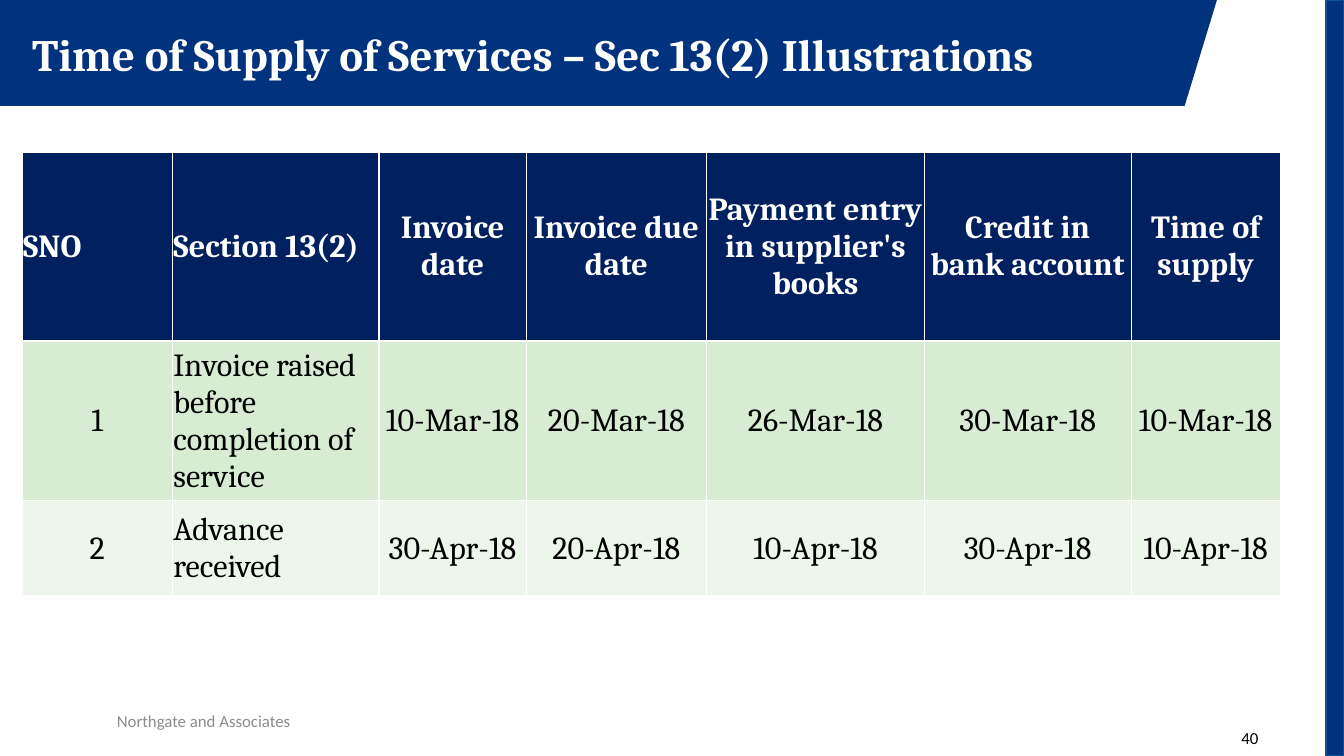
from lxml import etree
from pptx import Presentation
from pptx import util as u
from pptx.dml.color import RGBColor
from pptx.enum import shapes, text
from pptx.oxml import ns

COLORS = {
    "white": "FFFFFF", "black": "000000", "gray": "8C8C8C",
    "banner": "00327D", "stripe_line": "0B5292",
    "header": "002060", "odd_row": "D7ECD3", "even_row": "ECF6EA",
}
COLUMN_WIDTHS = [1.49, 2.05, 1.46, 1.79, 2.16, 2.05, 1.48]
ROW_HEIGHTS = [1.87, 1.59, 0.94]
ROW_FILLS = ["header", "odd_row", "even_row"]
ROWS = [
    ["SNO", "Section 13(2)", "Invoice date", "Invoice due date",
     "Payment entry in supplier's books", "Credit in bank account", "Time of supply"],
    ["1", "Invoice raised before completion of service",
     "10-Mar-18", "20-Mar-18", "26-Mar-18", "30-Mar-18", "10-Mar-18"],
    ["2", "Advance received",
     "30-Apr-18", "20-Apr-18", "10-Apr-18", "30-Apr-18", "10-Apr-18"],
]


def color(name):
    return RGBColor.from_string(COLORS[name])


def inches(box):
    return [u.Inches(length) for length in box]


def paint(shape, fill):
    shape.shadow.inherit = False
    shape.fill.solid()
    shape.fill.fore_color.rgb = color(fill)


def style(para, font, size, ink, bold=False, align=text.PP_ALIGN.LEFT):
    para.alignment = align
    for span in para.runs:
        span.font.name = font
        span.font.size = u.Pt(size)
        span.font.bold = bold
        span.font.color.rgb = color(ink)


def add_label(page, box, words, anchor, **look):
    frame = page.shapes.add_textbox(*inches(box)).text_frame
    frame.word_wrap = True
    frame.vertical_anchor = anchor
    frame.text = words
    style(frame.paragraphs[0], **look)
    return frame.paragraphs[0]


def add_banner(page, box, title):
    """Title band with a slanted right end."""
    left, top, width, height = box
    slant = 0.32
    corners = [(left, top + height), (left + width - slant, top + height), (left + width, top)]
    builder = page.shapes.build_freeform(u.Inches(left), u.Inches(top))
    builder.add_line_segments([inches(corner) for corner in corners], close=True)
    band = builder.convert_to_shape()
    paint(band, "banner")
    band.line.fill.background()
    para = add_label(page, (left + 0.22, top + 0.16, width + 0.17, 0.64), title,
                     text.MSO_ANCHOR.TOP, font="Cambria", size=32, ink="white", bold=True)
    para.line_spacing = 1.1
    para.space_before = u.Pt(7)


def add_stripe(page, box):
    stripe = page.shapes.add_shape(shapes.MSO_SHAPE.RECTANGLE, *inches(box))
    paint(stripe, "banner")
    stripe.line.color.rgb = color("stripe_line")
    stripe.line.width = u.Pt(1)


def add_borders(cell, top, bottom):
    """White cell borders; top and bottom are widths in points."""
    properties = cell._tc.get_or_add_tcPr()
    for side, width in (("L", 1), ("R", 1), ("T", top), ("B", bottom)):
        line = etree.SubElement(properties, ns.qn("a:ln" + side), w=str(u.Pt(width)))
        fill = etree.SubElement(line, ns.qn("a:solidFill"))
        etree.SubElement(fill, ns.qn("a:srgbClr"), val=COLORS["white"])


def fill_cell(cell, words, row, column):
    is_header = row == 0
    add_borders(cell, top=1.5 if row == 1 else 1, bottom=1.5 if is_header else 1)
    cell.fill.solid()
    cell.fill.fore_color.rgb = color(ROW_FILLS[row])
    cell.margin_left = cell.margin_right = cell.margin_top = u.Inches(0.01)
    cell.margin_bottom = 0
    cell.vertical_anchor = text.MSO_ANCHOR.MIDDLE
    cell.text = words
    is_left = column == 1 or (is_header and column == 0)
    style(cell.text_frame.paragraphs[0], "Cambria", 23,
          "white" if is_header else "black", is_header,
          text.PP_ALIGN.LEFT if is_left else text.PP_ALIGN.CENTER)


def add_supply_table(page, left, top):
    box = (left, top, sum(COLUMN_WIDTHS), sum(ROW_HEIGHTS))
    table = page.shapes.add_table(len(ROWS), len(COLUMN_WIDTHS), *inches(box)).table
    table.horz_banding = False
    for column, width in zip(table.columns, COLUMN_WIDTHS):
        column.width = u.Inches(width)
    for row, height in zip(table.rows, ROW_HEIGHTS):
        row.height = u.Inches(height)
    for row, entries in enumerate(ROWS):
        for column, words in enumerate(entries):
            fill_cell(table.cell(row, column), words, row, column)


def add_footer(page, firm_box, number_box):
    middle = text.MSO_ANCHOR.MIDDLE
    add_label(page, firm_box, "Northgate and Associates", middle,
              font="Calibri", size=12, ink="gray", align=text.PP_ALIGN.CENTER)
    add_label(page, number_box, "40", middle,
              font="Calibri", size=12, ink="black", align=text.PP_ALIGN.RIGHT)


def main():
    deck = Presentation()
    deck.slide_width, deck.slide_height = inches((13.33, 7.5))
    page = deck.slides.add_slide(deck.slide_layouts[6])
    add_banner(page, (0, 0, 12.07, 1.05), "Time of Supply of Services – Sec 13(2) Illustrations")
    add_stripe(page, (13.15, 0, 0.18, 7.5))
    add_supply_table(page, 0.22, 1.51)
    add_footer(page, (-0.23, 6.95, 4.5, 0.4), (9.58, 7.12, 3, 0.4))
    deck.save("out.pptx")


if __name__ == "__main__":
    main()
